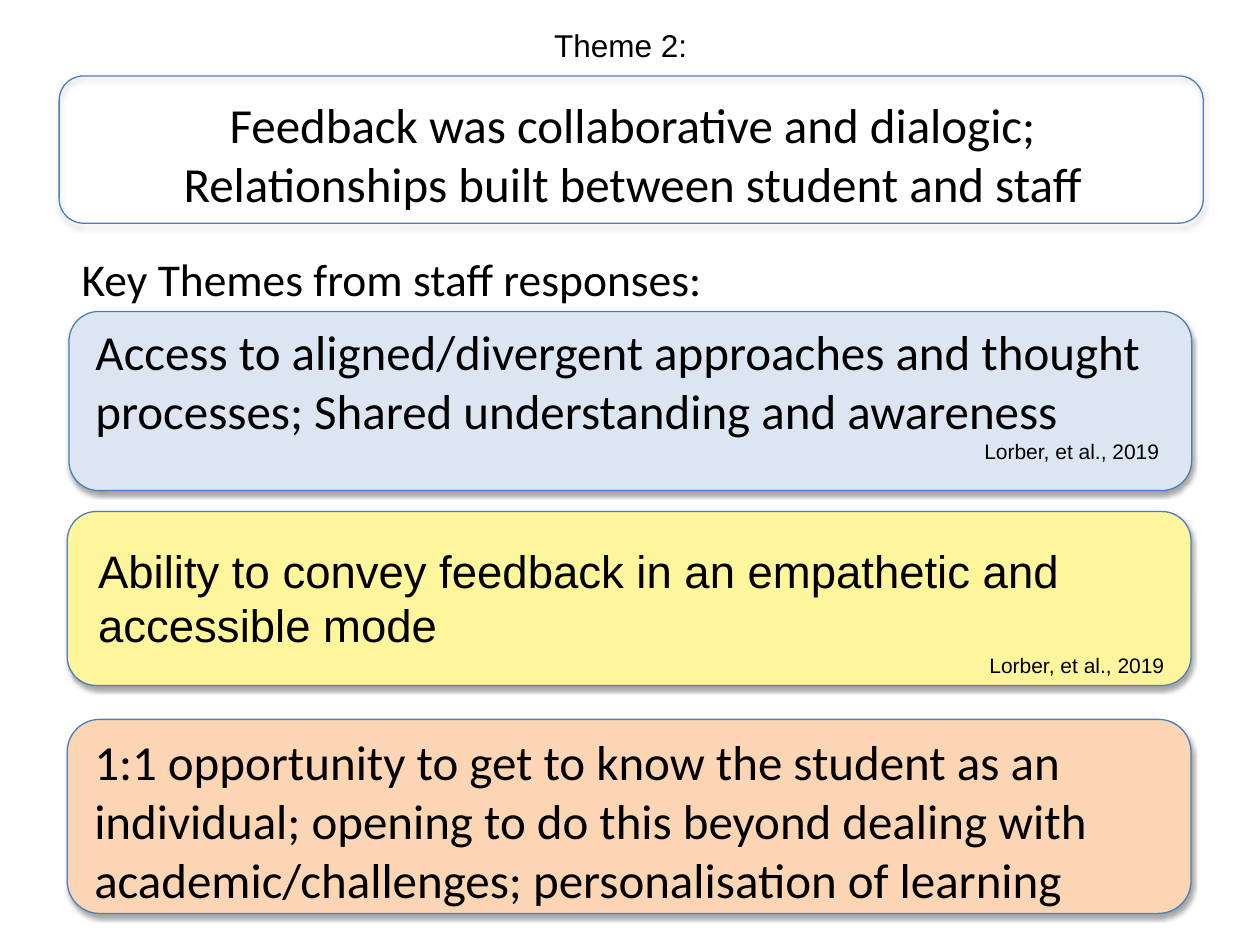
from dataclasses import dataclass

import pptx
import pptx.dml.color
import pptx.enum.shapes
import pptx.enum.text
import pptx.oxml
import pptx.oxml.ns
import pptx.util

Pt = pptx.util.Pt
Align = pptx.enum.text.PP_ALIGN

COLOURS = {
    "text": "000000",
    "outline": "4B7EBC",
    "blue": "DCE6F2",
    "yellow": "FFF59C",
    "orange": "FCD5B5",
}
Box = tuple[float, float, float, float]  # left, top, width, height in points


@dataclass(frozen=True)
class Line:
    text: str
    size: float
    font: str = "Calibri"
    align: Align = Align.LEFT


@dataclass(frozen=True)
class Card:
    panel: Box
    text_box: Box
    lines: tuple[Line, ...]
    fill: str | None = None


CITATION = Line("Lorber, et al., 2019", 12, "Arial", Align.RIGHT)

LABELS = (
    ((309.6, 11.5, 100.8, 28.8), Line("Theme 2:", 18, "Arial")),
    ((39.6, 139.7, 626.4, 38.9), Line("Key Themes from staff responses:", 26)),
)

CARDS = (
    Card(
        (33.8, 43.4, 653.8, 84.2),
        (46.1, 50.4, 630.7, 74.9),
        (Line("Feedback was collaborative and dialogic;\v"
              "Relationships built between student and staff", 28, align=Align.CENTER),),
    ),
    Card(
        (39.4, 178, 641.6, 102.4),
        (47.5, 180, 622.1, 126),
        (Line("Access to aligned/divergent approaches and thought processes; "
              "Shared understanding and awareness", 28), CITATION),
        "blue",
    ),
    Card(
        (38.4, 292.3, 642.2, 99.4),
        (49, 306.7, 623.5, 85),
        (Line("Ability to convey feedback in an empathetic and\vaccessible mode",
              26, "Arial"), CITATION),
        "yellow",
    ),
    Card(
        (38.4, 411.1, 642.2, 110.9),
        (46.8, 414.7, 623.5, 95.8),
        (Line("1:1 opportunity to get to know the student as an individual; "
              "opening to do this beyond dealing with academic/challenges; "
              "personalisation of learning", 28),),
        "orange",
    ),
)


def colour(name: str) -> pptx.dml.color.RGBColor:
    return pptx.dml.color.RGBColor.from_string(COLOURS[name])


def add_text(shapes, box: Box, lines: tuple[Line, ...]) -> None:
    frame = shapes.add_textbox(*map(Pt, box)).text_frame
    frame.word_wrap = True
    for index, line in enumerate(lines):
        paragraph = frame.add_paragraph() if index else frame.paragraphs[0]
        paragraph.text = line.text
        paragraph.alignment = line.align
        paragraph.font.size = Pt(line.size)
        paragraph.font.name = line.font
        paragraph.font.color.rgb = colour("text")


def add_soft_shadow(shape) -> None:
    """Give the shape a faint shadow falling straight down."""
    shape.shadow.inherit = False
    effects = shape._element.spPr.find(pptx.oxml.ns.qn("a:effectLst"))
    effects.append(pptx.oxml.parse_xml(
        f'<a:outerShdw {pptx.oxml.ns.nsdecls("a")} blurRad="{Pt(3.1)}" dist="{Pt(1.8)}" '
        f'dir="5400000" rotWithShape="0"><a:srgbClr val="{COLOURS["text"]}">'
        '<a:alpha val="35000"/></a:srgbClr></a:outerShdw>'))


def add_card(slide, card: Card) -> None:
    group = slide.shapes.add_group_shape()
    panel = group.shapes.add_shape(
        pptx.enum.shapes.MSO_SHAPE.ROUNDED_RECTANGLE, *map(Pt, card.panel))
    if card.fill:
        panel.fill.solid()
        panel.fill.fore_color.rgb = colour(card.fill)
    else:
        panel.fill.background()
    panel.line.color.rgb = colour("outline")
    panel.line.width = Pt(0.75)
    add_soft_shadow(panel)
    add_text(group.shapes, card.text_box, card.lines)


def main() -> None:
    presentation = pptx.Presentation()
    presentation.slide_width = Pt(720)
    presentation.slide_height = Pt(540)
    slide = presentation.slides.add_slide(presentation.slide_layouts[6])
    for box, line in LABELS:
        add_text(slide.shapes, box, (line,))
    for card in CARDS:
        add_card(slide, card)
    presentation.save("out.pptx")


if __name__ == "__main__":
    main()
